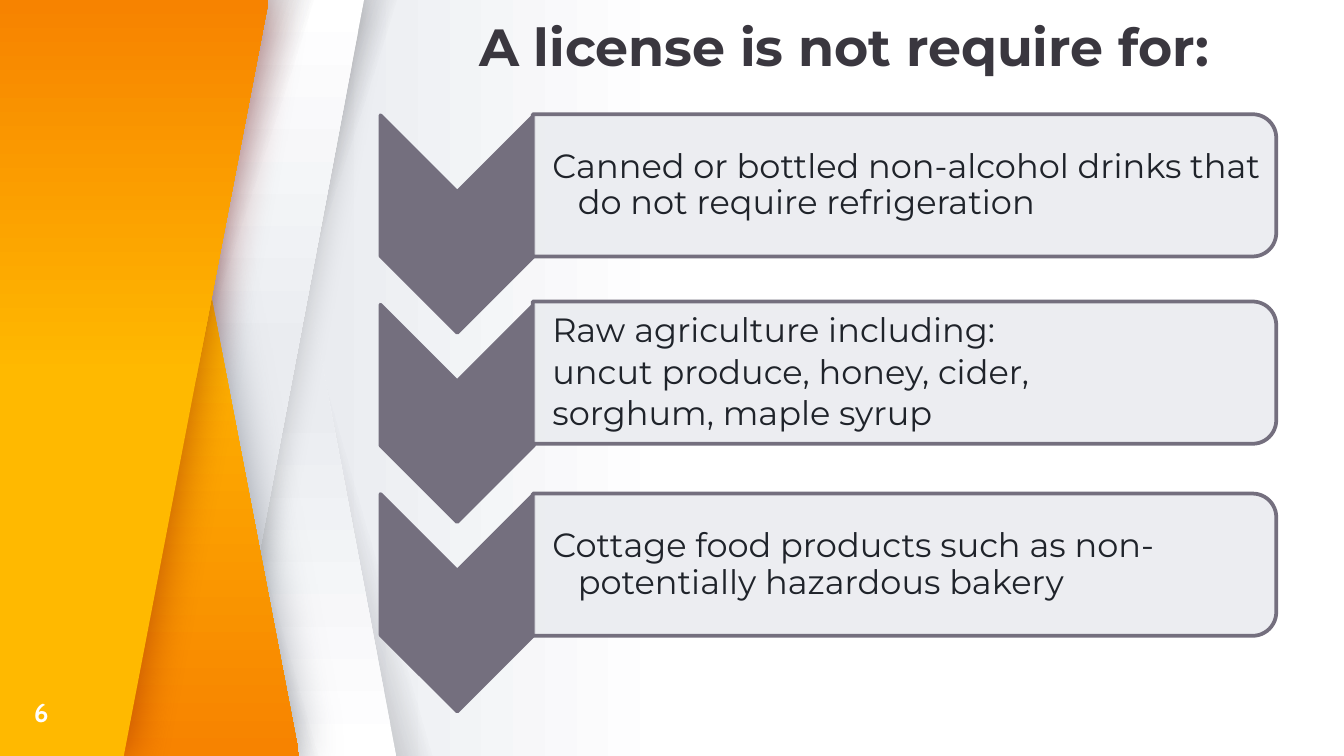
"""Build the slide listing the foods that need no license."""
from lxml import etree
from pptx import Presentation
from pptx import util as u
from pptx.dml.color import RGBColor
from pptx.enum import shapes, text
from pptx.oxml.ns import qn

WHITE = RGBColor(0xFF, 0xFF, 0xFF)
BLACK = RGBColor(0x00, 0x00, 0x00)
MIST = RGBColor(0xEA, 0xEC, 0xF0)
SLATE = RGBColor(0x3E, 0x46, 0x55)
CHARCOAL = RGBColor(0x27, 0x25, 0x2C)
YELLOW = RGBColor(0xFF, 0xB9, 0x00)
ORANGE = RGBColor(0xF7, 0x83, 0x00)
MAROON = RGBColor(0x7E, 0x08, 0x08)
PURPLE = RGBColor(0x74, 0x6F, 0x7E)
TITLE_INK = RGBColor(0x3A, 0x37, 0x3F)
BODY_INK = RGBColor(0x1F, 0x23, 0x2A)

WIDTH, HEIGHT = 25.4, 14.29
STRIP_WIDTH = 5.84
CHEVRON_TOP, CHEVRON_PITCH = 2.18, 3.58
ROWS = [
    (2.16, ["Canned or bottled non-alcohol drinks that do not require refrigeration"]),
    (5.7, ["Raw agriculture including:", "uncut produce, honey, cider,", "sorghum, maple syrup"]),
    (9.33, ["Cottage food products such as non-potentially hazardous bakery"]),
]
PAPER = [(0, WHITE, 100), (47, MIST, 100), (100, MIST, 100)]


def shade(clear_at):
    """Return gradient stops that fade from slate to clear."""
    return [(0, SLATE, 100), (13, SLATE, 100), (clear_at, CHARCOAL, 0), (100, CHARCOAL, 0)]


def add_color(parent, color, alpha):
    """Append a colour with its opacity in percent."""
    node = etree.SubElement(parent, qn("a:srgbClr"), val=str(color))
    if alpha < 100:
        etree.SubElement(node, qn("a:alpha"), val=str(alpha * 1000))


def set_gradient(fill, element, stops, angle):
    """Give a fill a linear gradient of (position, colour, opacity) stops."""
    fill.solid()
    solid = next(element.iter(qn("a:solidFill")))
    gradient = etree.Element(qn("a:gradFill"), rotWithShape="1")
    stop_list = etree.SubElement(gradient, qn("a:gsLst"))
    for position, color, alpha in stops:
        add_color(etree.SubElement(stop_list, qn("a:gs"), pos=str(position * 1000)), color, alpha)
    etree.SubElement(gradient, qn("a:lin"), ang=str(angle * 60000), scaled="0")
    solid.getparent().replace(solid, gradient)


def set_shadow(shape, color, alpha, blur):
    """Give a shape a soft shadow all around."""
    shape.shadow.inherit = False
    effects = shape.element.spPr.find(qn("a:effectLst"))
    shadow = etree.SubElement(effects, qn("a:outerShdw"), blurRad=str(u.Pt(blur)),
                              dist="0", dir="0", algn="ctr", rotWithShape="0")
    add_color(shadow, color, alpha)


def add_strip(page, left, slant, stops, angle, flipped=False):
    """Add a slanted full-height strip."""
    strip = page.shapes.add_shape(shapes.MSO_SHAPE.PARALLELOGRAM, u.Cm(left), 0,
                                  u.Cm(STRIP_WIDTH), u.Cm(HEIGHT))
    strip.adjustments[0] = slant
    if flipped:
        strip.element.spPr.xfrm.set("flipH", "1")
    strip.shadow.inherit = False
    strip.line.fill.background()
    set_gradient(strip.fill, strip.element, stops, angle)
    return strip


def add_wedge(page, top_width, bottom_width, yellow_end, angle, shadow_color):
    """Add an orange wedge along the left edge of the slide."""
    outline = page.shapes.build_freeform(0, 0)
    outline.add_line_segments([(0, u.Cm(HEIGHT)), (u.Cm(bottom_width), u.Cm(HEIGHT)),
                               (u.Cm(top_width), 0)], close=True)
    wedge = outline.convert_to_shape()
    wedge.line.fill.background()
    stops = [(0, YELLOW, 100), (yellow_end, YELLOW, 100), (100, ORANGE, 100)]
    set_gradient(wedge.fill, wedge.element, stops, angle)
    set_shadow(wedge, shadow_color, 50, 24.8)


def add_turned(page, kind, left, top, width, height, fill_color, alpha=100):
    """Add a shape turned by 90 degrees that covers the given area."""
    shape = page.shapes.add_shape(kind, u.Cm(left + (width - height) / 2),
                                  u.Cm(top + (height - width) / 2), u.Cm(height), u.Cm(width))
    shape.rotation = 90
    shape.shadow.inherit = False
    shape.fill.solid()
    shape.fill.fore_color.rgb = fill_color
    if alpha < 100:
        color = next(shape.element.spPr.iter(qn("a:srgbClr")))
        etree.SubElement(color, qn("a:alpha"), val=str(alpha * 1000))
    shape.line.color.rgb = PURPLE
    shape.line.width = u.Pt(2)


def add_text(page, area, lines, font, size, color, bold=False,
             anchor=text.MSO_ANCHOR.MIDDLE, margins=(0, 0, 0, 0)):
    """Add a text box with one paragraph per line and return its paragraphs."""
    frame = page.shapes.add_textbox(*map(u.Cm, area)).text_frame
    frame.word_wrap = True
    frame.vertical_anchor = anchor
    (frame.margin_left, frame.margin_top,
     frame.margin_right, frame.margin_bottom) = map(u.Cm, margins)
    frame.text = "\n".join(lines)
    for para in frame.paragraphs:
        para.font.name = font
        para.font.size = u.Pt(size)
        para.font.bold = bold
        para.font.color.rgb = color
    return frame.paragraphs


def add_row(page, chevron_top, panel_top, lines):
    """Add a chevron with its rounded panel and text."""
    add_turned(page, shapes.MSO_SHAPE.CHEVRON, 7.19, chevron_top, 2.9, 4.11, PURPLE)
    add_turned(page, shapes.MSO_SHAPE.ROUND_2_SAME_RECTANGLE, 10.07, panel_top,
               14.05, 2.69, MIST, 90)
    paras = add_text(page, (10.08, panel_top + 0.15, 13.92, 2.41), lines, "Montserrat", 18,
                     BODY_INK, margins=(0.36, 0.03, 0.03, 0.03))
    for para in paras:
        para.line_spacing = 0.9
        para.space_after = u.Pt(2.7)
        properties = para._p.get_or_add_pPr()
        properties.set("marL", str(u.Cm(0.48)))
        properties.set("indent", str(u.Cm(-0.48)))


def add_backdrop(page):
    """Add the background and the slanted bands on the left."""
    background = [(0, WHITE, 100), (50, WHITE, 100), (76, MIST, 100), (100, MIST, 100)]
    set_gradient(page.background.fill, page.element, background, 180)
    add_strip(page, 2.72, 0.753, shade(55), 196, flipped=True)
    add_strip(page, 1.65, 0.463, PAPER, 270, flipped=True)
    add_strip(page, 1.65, 0.753, shade(56), 18)
    set_shadow(add_strip(page, 1.04, 0.463, PAPER, 90), BLACK, 20, 16.9)
    add_strip(page, 0.56, 0.753, shade(55), 196, flipped=True)
    add_wedge(page, 2.92, 5.66, 37, 90, SLATE)
    add_strip(page, 0.08, 0.753, shade(56), 18)
    add_wedge(page, 5.08, 2.34, 50, 270, MAROON)


def main():
    """Build and save the deck."""
    deck = Presentation()
    deck.slide_width, deck.slide_height = u.Cm(WIDTH), u.Cm(HEIGHT)
    page = deck.slides.add_slide(deck.slide_layouts[6])
    add_backdrop(page)
    title = add_text(page, (6.5, 0.48, 18.9, 0.99), ["A license is not require for:"],
                     "Montserrat", 28, TITLE_INK, True, text.MSO_ANCHOR.BOTTOM)[0]
    title.alignment = text.PP_ALIGN.CENTER
    title.line_spacing = 0.9
    add_text(page, (0.64, 13.11, 1.02, 0.69), ["6"], "Cabin", 14, WHITE, True)
    for index, (panel_top, lines) in enumerate(ROWS):
        add_row(page, CHEVRON_TOP + index * CHEVRON_PITCH, panel_top, lines)
    deck.save("out.pptx")


if __name__ == "__main__":
    main()
